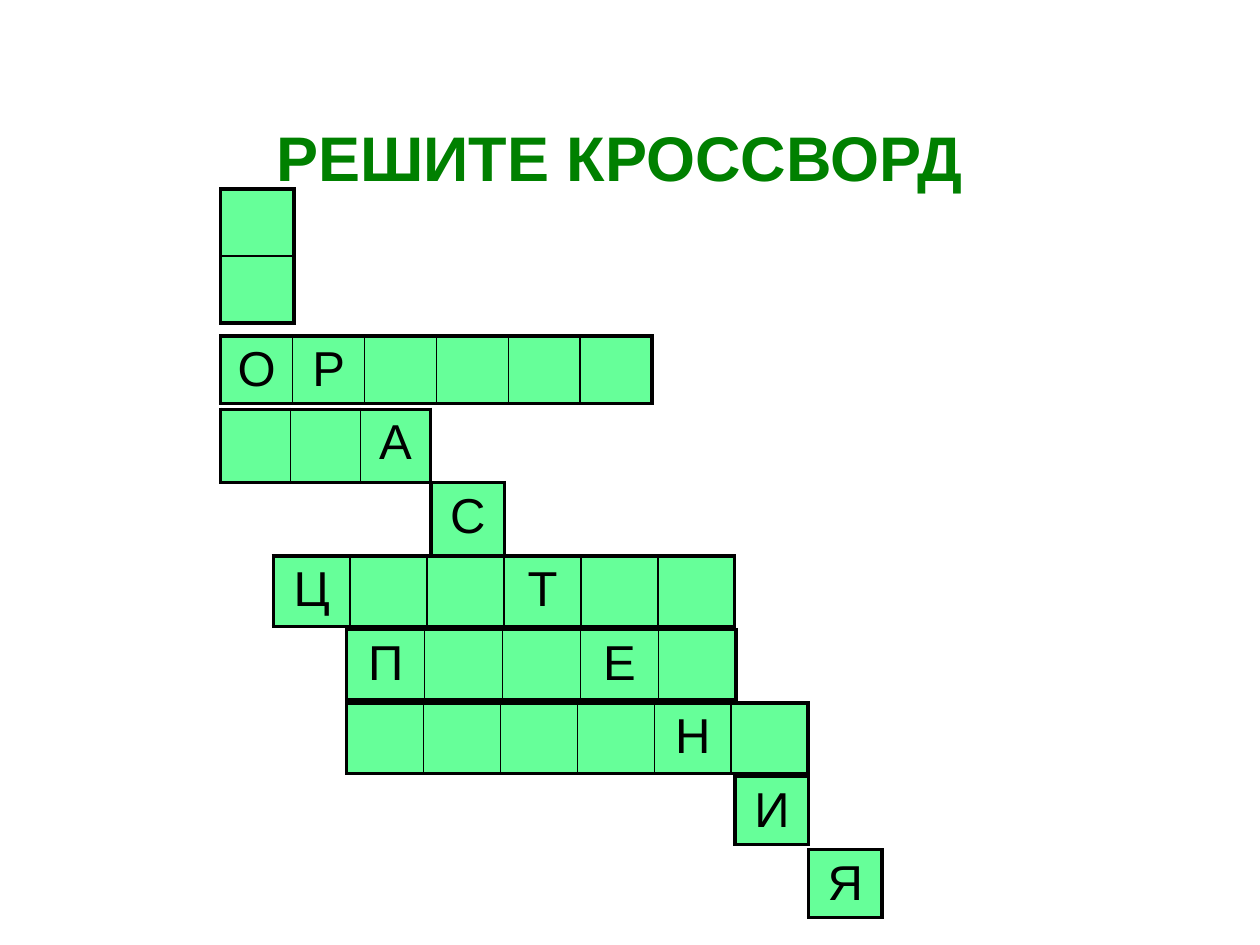
from lxml.etree import SubElement
from pptx import Presentation
from pptx.dml.color import RGBColor
from pptx.enum.text import MSO_ANCHOR, MSO_AUTO_SIZE, PP_ALIGN
from pptx.oxml.ns import qn
from pptx.util import Cm, Pt

HEADING = "РЕШИТЕ КРОССВОРД"
EMPTY = "."
WORDS = [
    {"step": 0, "left": 4.45, "cell": (1.48, 1.35), "rows": [".", "."]},
    {"step": 2, "left": 4.45, "cell": (1.45, 1.36), "rows": ["ОР...."]},
    {"step": 3, "left": 4.45, "cell": (1.41, 1.48), "rows": ["..А"]},
    {"step": 4, "left": 8.69, "cell": (1.48, 1.48), "rows": ["С"]},
    {"step": 5, "left": 5.51, "cell": (1.55, 1.42), "rows": ["Ц..Т.."]},
    {"step": 6, "left": 6.99, "cell": (1.57, 1.42), "rows": ["П..Е."]},
    {"step": 7, "left": 6.99, "cell": (1.55, 1.42), "rows": ["....Н."]},
    {"step": 8, "left": 14.82, "cell": (1.48, 1.37), "rows": ["И"]},
    {"step": 9, "left": 16.3, "cell": (1.48, 1.37), "rows": ["Я"]},
]
FIRST_TOP, PITCH = 3.81, 1.48

THEME = {
    "font": "Arial",
    "heading": RGBColor(0x00, 0x80, 0x00),
    "letter": RGBColor(0x00, 0x00, 0x00),
    "cell": RGBColor(0x66, 0xFF, 0x99),
    "border": "000000",
    "heading_size": Pt(36),
    "letter_size": Pt(28),
    "outer": Pt(2.25),
    "inner": Pt(1),
}
HEADING_BOX = {"left": Cm(0.85), "top": Cm(2.12), "width": Cm(23.28), "height": Cm(2.75)}
HEADING_FRAME = {"margin_top": Cm(0.27), "vertical_anchor": MSO_ANCHOR.TOP,
                 "auto_size": MSO_AUTO_SIZE.NONE, "word_wrap": True}
HEADING_FONT = {"name": THEME["font"], "size": THEME["heading_size"], "bold": True}
LETTER_FONT = {"name": THEME["font"], "size": THEME["letter_size"], "bold": False}
CELL_FORMAT = {"margin_left": Cm(0.1), "margin_right": Cm(0.1), "margin_top": Cm(0.13),
               "margin_bottom": Cm(0.05), "vertical_anchor": MSO_ANCHOR.TOP}
TABLE_FORMAT = {"first_row": False, "horz_banding": False}


def apply(target, values):
    for key, value in values.items():
        setattr(target, key, value)


def write(paragraph, text, font, color):
    paragraph.alignment = PP_ALIGN.CENTER
    run = paragraph.add_run()
    run.text = text
    apply(run.font, font)
    run.font.color.rgb = color


def draw_borders(cell, outer_sides):
    properties = cell._tc.get_or_add_tcPr()
    for position, (side, is_outer) in enumerate(outer_sides.items()):
        width = THEME["outer"] if is_outer else THEME["inner"]
        line = SubElement(properties, qn(f"a:ln{side}"), w=str(width))
        fill = SubElement(line, qn("a:solidFill"))
        SubElement(fill, qn("a:srgbClr"), val=THEME["border"])
        properties.insert(position, line)


def add_word(slide, word):
    rows = word["rows"]
    width, height = word["cell"]
    row_count, column_count = len(rows), len(rows[0])
    grid = slide.shapes.add_table(
        row_count, column_count, Cm(word["left"]), Cm(FIRST_TOP + word["step"] * PITCH),
        Cm(width * column_count), Cm(height * row_count)).table
    apply(grid, TABLE_FORMAT)
    for r, letters in enumerate(rows):
        for c, letter in enumerate(letters):
            cell = grid.cell(r, c)
            apply(cell, CELL_FORMAT)
            cell.fill.solid()
            cell.fill.fore_color.rgb = THEME["cell"]
            draw_borders(cell, {"L": c == 0, "R": c == column_count - 1,
                                "T": r == 0, "B": r == row_count - 1})
            if letter != EMPTY:
                write(cell.text_frame.paragraphs[0], letter, LETTER_FONT, THEME["letter"])


def main():
    deck = Presentation()
    apply(deck, {"slide_width": Cm(25.4), "slide_height": Cm(19.05)})
    slide = deck.slides.add_slide(deck.slide_layouts[5])
    heading = slide.shapes.title
    apply(heading, HEADING_BOX)
    apply(heading.text_frame, HEADING_FRAME)
    write(heading.text_frame.paragraphs[0], HEADING, HEADING_FONT, THEME["heading"])
    for word in WORDS:
        add_word(slide, word)
    deck.save("out.pptx")


if __name__ == "__main__":
    main()
